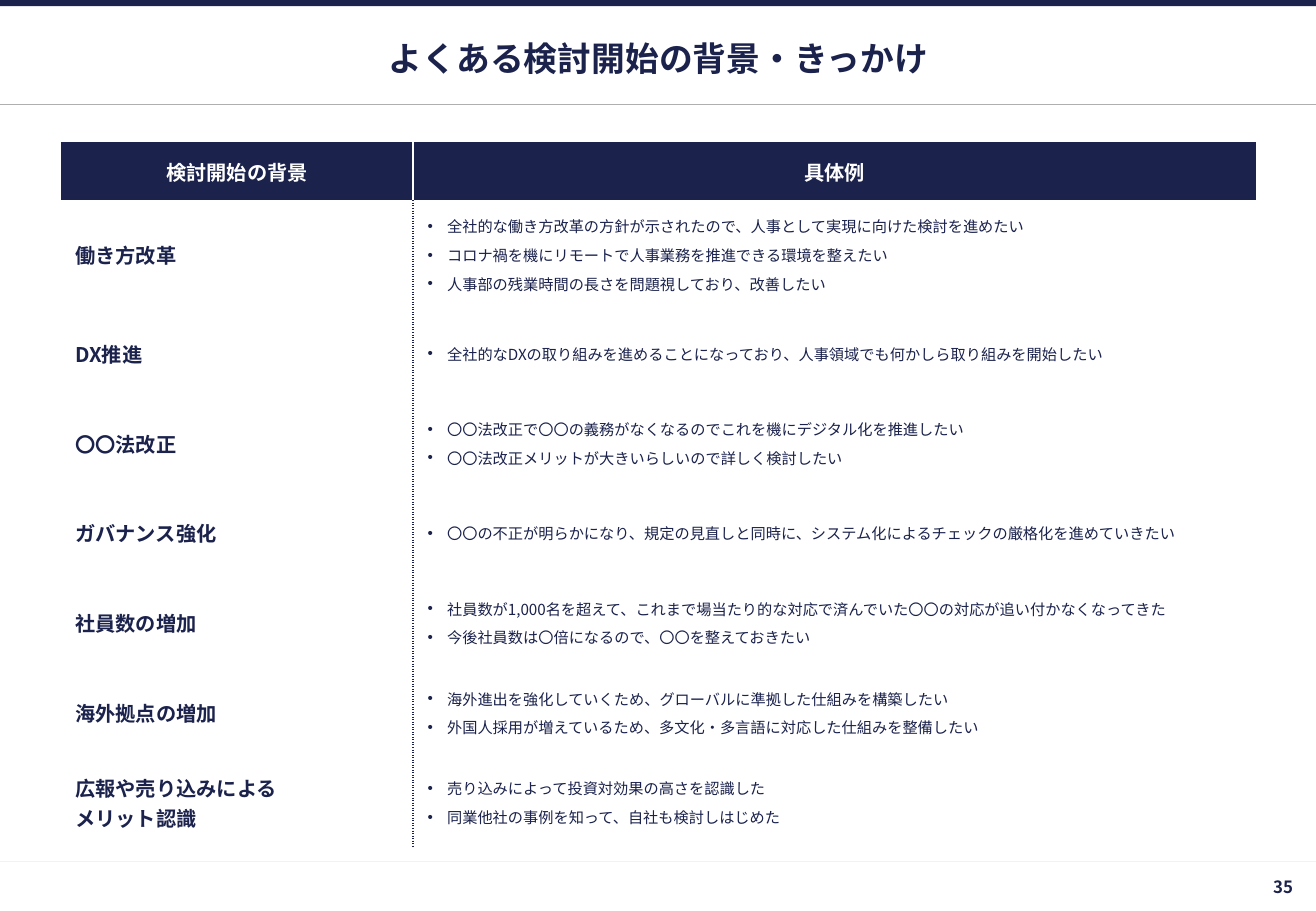
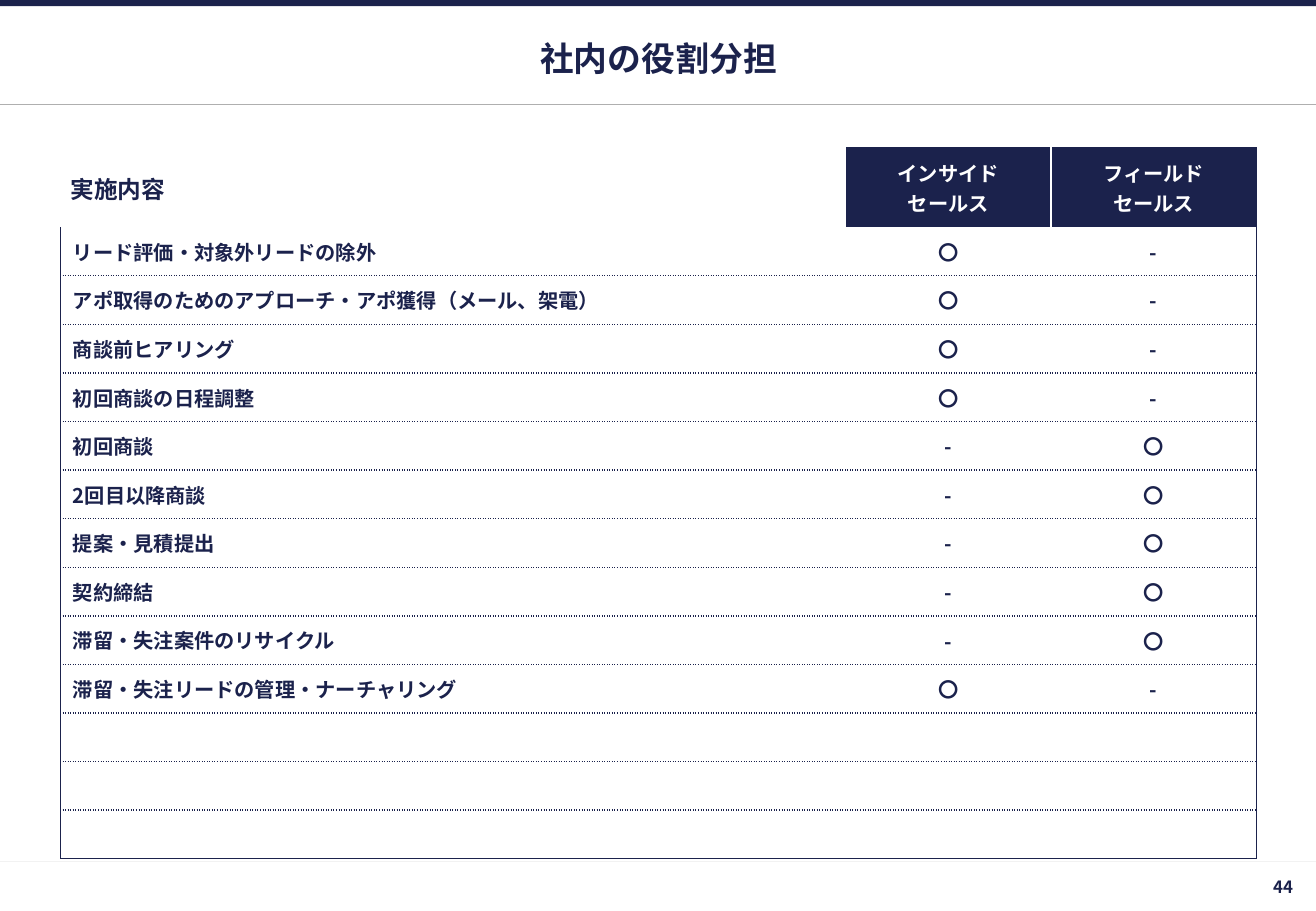
from lxml.etree import SubElement
from pptx import Presentation
from pptx.dml.color import RGBColor
from pptx.enum.shapes import MSO_CONNECTOR, MSO_SHAPE
from pptx.enum.text import MSO_ANCHOR as Anchor, PP_ALIGN as Align
from pptx.oxml import parse_xml
from pptx.oxml.ns import nsdecls, qn
from pptx.util import Inches, Pt

NAVY, WHITE, RULE, FOOT_RULE = "1B224C", "FFFFFF", "AFAFAF", "F2F2F2"
FONT = "Noto Sans CJK JP"
WIDTH, HEIGHT = 10.83, 7.5
MARGIN, CONTENT_WIDTH = 0.5, 9.84
SOLID, DOTTED, DIVIDER = (NAVY, "solid"), (NAVY, "sysDot"), (WHITE, "solid")

BACKGROUNDS = [
    ("働き方改革", [
        "全社的な働き方改革の方針が示されたので、人事として実現に向けた検討を進めたい",
        "コロナ禍を機にリモートで人事業務を推進できる環境を整えたい",
        "人事部の残業時間の長さを問題視しており、改善したい"]),
    ("DX推進", [
        "全社的なDXの取り組みを進めることになっており、人事領域でも何かしら取り組みを開始したい"]),
    ("〇〇法改正", [
        "〇〇法改正で〇〇の義務がなくなるのでこれを機にデジタル化を推進したい",
        "〇〇法改正メリットが大きいらしいので詳しく検討したい"]),
    ("ガバナンス強化", [
        "〇〇の不正が明らかになり、規定の見直しと同時に、システム化によるチェックの厳格化を進めていきたい"]),
    ("社員数の増加", [
        "社員数が1,000名を超えて、これまで場当たり的な対応で済んでいた〇〇の対応が追い付かなくなってきた",
        "今後社員数は〇倍になるので、〇〇を整えておきたい"]),
    ("海外拠点の増加", [
        "海外進出を強化していくため、グローバルに準拠した仕組みを構築したい",
        "外国人採用が増えているため、多文化・多言語に対応した仕組みを整備したい"]),
    ("広報や売り込みによる\nメリット認識", [
        "売り込みによって投資対効果の高さを認識した",
        "同業他社の事例を知って、自社も検討しはじめた"]),
]

INSIDE, FIELD, OPEN = ("〇", "-"), ("-", "〇"), ("", "")
TASKS = [
    ("リード評価・対象外リードの除外", INSIDE),
    ("アポ取得のためのアプローチ・アポ獲得（メール、架電）", INSIDE),
    ("商談前ヒアリング", INSIDE),
    ("初回商談の日程調整", INSIDE),
    ("初回商談", FIELD),
    ("2回目以降商談", FIELD),
    ("提案・見積提出", FIELD),
    ("契約締結", FIELD),
    ("滞留・失注案件のリサイクル", FIELD),
    ("滞留・失注リードの管理・ナーチャリング", INSIDE),
] + [("", OPEN)] * 3


def rgb(value):
    return RGBColor.from_string(value)


class Deck:
    """Holds the shared style and the slide being built."""

    def __init__(self):
        self.prs = Presentation()
        self.prs.slide_width, self.prs.slide_height = Inches(WIDTH), Inches(HEIGHT)
        self.slide = None

    def start(self, title, number):
        """Add a slide with its band, rules, title and page number."""
        self.slide = self.prs.slides.add_slide(self.prs.slide_layouts[6])
        self.rule(7.09, FOOT_RULE)
        self.band(0, 0, WIDTH, 0.05)
        self.rule(0.86, RULE)
        self.text(title, MARGIN, 0.26, CONTENT_WIDTH, 0.43, 20, Align.CENTER)
        self.text(number, 8.9, 7.1, 1.94, 0.4, 10, Align.RIGHT, right=0.2)

    def band(self, x, y, w, h):
        band = self.slide.shapes.add_shape(
            MSO_SHAPE.RECTANGLE, Inches(x), Inches(y), Inches(w), Inches(h))
        band.shadow.inherit = False
        band.fill.solid()
        band.fill.fore_color.rgb = rgb(NAVY)
        band.line.fill.background()

    def rule(self, y, color):
        rule = self.slide.shapes.add_connector(
            MSO_CONNECTOR.STRAIGHT, 0, Inches(y), Inches(WIDTH), Inches(y))
        rule.line.color.rgb = rgb(color)
        rule.line.width = Pt(0.75)
        SubElement(rule._element.spPr, qn("a:effectLst"))

    def text(self, words, x, y, w, h, size, align, right=0.04):
        frame = self.slide.shapes.add_textbox(
            Inches(x), Inches(y), Inches(w), Inches(h)).text_frame
        frame.word_wrap = True
        frame.vertical_anchor = Anchor.MIDDLE
        frame.margin_left = frame.margin_top = frame.margin_bottom = Inches(0.04)
        frame.margin_right = Inches(right)
        frame.text = words
        self.style(frame, size, align=align)

    def style(self, frame, size, color=NAVY, bold=True, align=Align.LEFT, bullets=False):
        for paragraph in frame.paragraphs:
            paragraph.alignment = align
            font = paragraph.font
            font.size, font.bold, font.name = Pt(size), bold, FONT
            font.color.rgb = rgb(color)
            SubElement(font._element, qn("a:ea"), typeface=FONT)
            if not paragraph.text:
                SubElement(paragraph._p, qn("a:endParaRPr"), sz=str(size * 100))
            if bullets:
                self.bullet(paragraph)

    def bullet(self, paragraph):
        paragraph.space_after = Pt(4)
        props = paragraph._p.get_or_add_pPr()
        props.set("marL", str(Inches(0.16)))
        props.set("indent", str(-Inches(0.16)))
        for part in (f'<a:buClr {nsdecls("a")}><a:srgbClr val="{NAVY}"/></a:buClr>',
                     f'<a:buFont {nsdecls("a")} typeface="Arial"/>',
                     f'<a:buChar {nsdecls("a")} char="•"/>'):
            props.find(qn("a:defRPr")).addprevious(parse_xml(part))

    def table(self, y, widths, heights):
        table = self.slide.shapes.add_table(
            len(heights), len(widths), Inches(MARGIN), Inches(y),
            Inches(sum(widths)), Inches(sum(heights))).table
        table.first_row = table.horz_banding = False
        for column, width in zip(table.columns, widths):
            column.width = Inches(width)
        for row, height in zip(table.rows, heights):
            row.height = Inches(height)
        return table

    def cell(self, cell, words, insets, edges, fill=WHITE, size=12, **style):
        """Fill a cell; insets are (side, top and bottom), edges map L, R, T, B to lines."""
        cell.vertical_anchor = Anchor.MIDDLE
        cell.margin_left = cell.margin_right = Inches(insets[0])
        cell.margin_top = cell.margin_bottom = Inches(insets[1])
        cell.text_frame.text = words
        self.style(cell.text_frame, size, **style)
        props = cell._tc.get_or_add_tcPr()
        for side in "LRTB":
            line = SubElement(props, qn(f"a:ln{side}"), w=str(Pt(1)))
            if side not in edges:
                SubElement(line, qn("a:noFill"))
                continue
            color, dash = edges[side]
            SubElement(SubElement(line, qn("a:solidFill")), qn("a:srgbClr"), val=color)
            SubElement(line, qn("a:prstDash"), val=dash)
        if fill:
            cell.fill.solid()
            cell.fill.fore_color.rgb = rgb(fill)
        else:
            cell.fill.background()


def add_backgrounds(deck):
    deck.start("よくある検討開始の背景・きっかけ", "35")
    table = deck.table(1.17, [2.9, 6.94], [0.48, 0.89] + [0.74] * (len(BACKGROUNDS) - 1))
    for col, (heading, side) in enumerate([("検討開始の背景", "R"), ("具体例", "L")]):
        deck.cell(table.cell(0, col), heading, (0.08, 0.12), {side: DIVIDER},
                  fill=NAVY, color=WHITE, align=Align.CENTER)
    for row, (background, examples) in enumerate(BACKGROUNDS, 1):
        deck.cell(table.cell(row, 0), background, (0.12, 0.12), {"R": DOTTED})
        deck.cell(table.cell(row, 1), "\n".join(examples), (0.12, 0.12), {"L": DOTTED},
                  size=9, bold=False, bullets=True)


def add_roles(deck):
    deck.start("社内の役割分担", "44")
    table = deck.table(1.22, [6.46, 1.69, 1.69], [0.65] + [0.4] * len(TASKS))
    deck.cell(table.cell(0, 0), "実施内容", (0.08, 0.08), {"R": DIVIDER}, fill=None, size=14)
    for col, (team, right) in enumerate(
            [("インサイド\vセールス", DIVIDER), ("フィールド\vセールス", SOLID)], 1):
        deck.cell(table.cell(0, col), team, (0.08, 0.08),
                  {"L": DIVIDER, "T": SOLID, "R": right},
                  fill=NAVY, color=WHITE, align=Align.CENTER)
    for row, (task, marks) in enumerate(TASKS, 1):
        edges = {"B": SOLID if row == len(TASKS) else DOTTED}
        if row > 1:
            edges["T"] = DOTTED
        deck.cell(table.cell(row, 0), task, (0.1, 0.05), {**edges, "L": SOLID})
        for col, mark in enumerate(marks, 1):
            outer = {"R": SOLID} if col == len(marks) else {}
            deck.cell(table.cell(row, col), mark, (0.08, 0.08), {**edges, **outer},
                      align=Align.CENTER)


def main():
    deck = Deck()
    add_backgrounds(deck)
    add_roles(deck)
    deck.prs.save("out.pptx")


if __name__ == "__main__":
    main()
